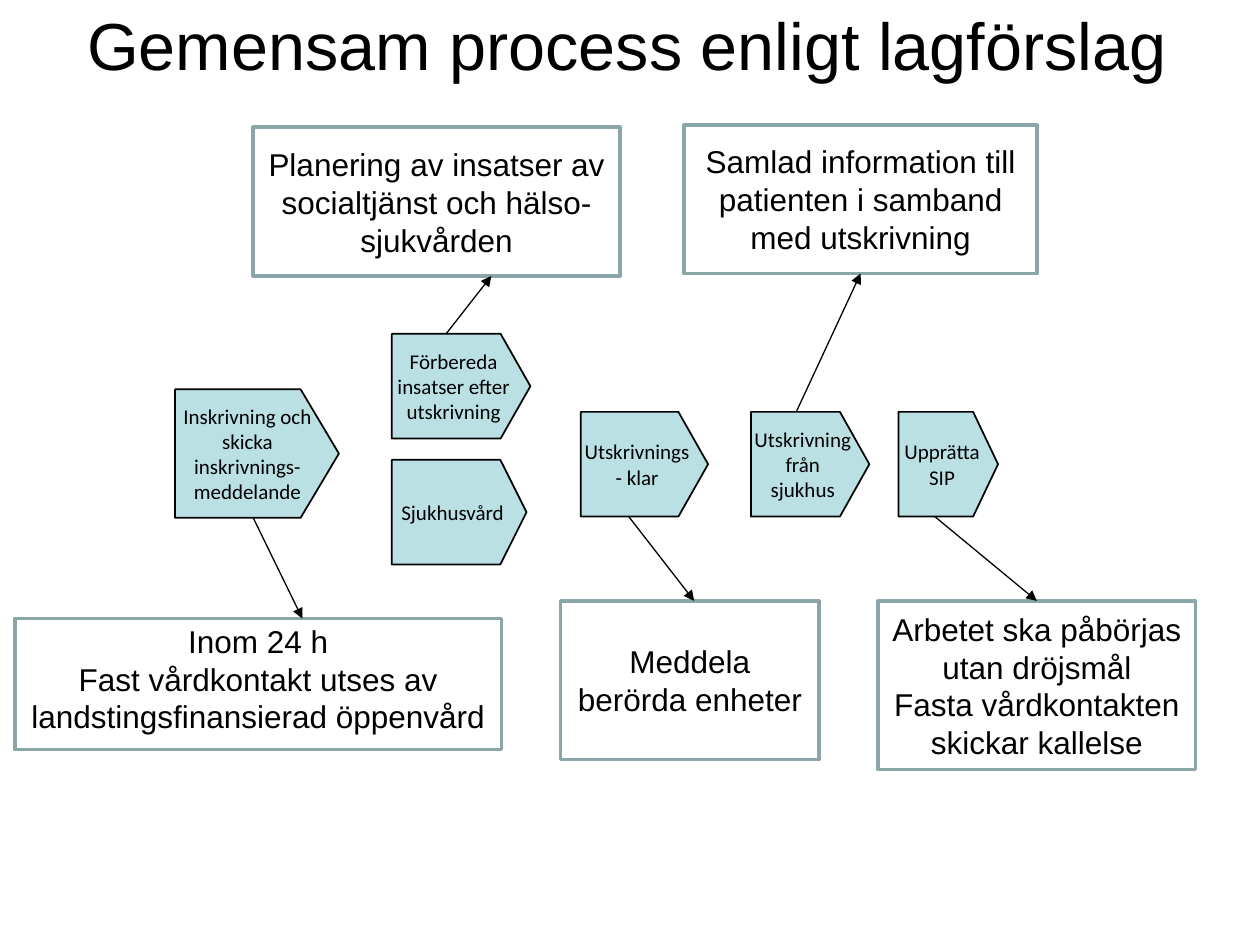
import pptx
import pptx.util
import pptx.dml.color
import pptx.enum.shapes
import pptx.enum.text
import pptx.oxml
import pptx.oxml.ns

Pt = pptx.util.Pt
SHAPE = pptx.enum.shapes.MSO_SHAPE
TOP, BOTTOM = 0, 2

THEME = {
    "ink": "000000", "step": "BBE0E3", "edge": "8AA6A8", "paper": "FFFFFF",
    "head": ("Arial", 38), "note": ("Arial", 18), "small": ("Calibri", 12),
}

TITLE = "Gemensam process enligt lagförslag"

# name: (left, top, width, height), point depth, text
STEPS = {
    "admit": ((100.1, 222.5, 93.6, 73.4), 0.298,
              "Inskrivning och skicka inskrivnings-meddelande"),
    "ready": ((331.9, 235.4, 72.7, 59.8), 0.283, "Utskrivnings- klar"),
    "plan": ((513.4, 235.4, 56.9, 59.8), 0.25, "Upprätta SIP"),
    "leave": ((429.1, 235.4, 67.7, 59.8), 0.281, "Utskrivning från sjukhus"),
    "prepare": ((223.9, 190.8, 79.2, 59.8), 0.284,
                "Förbereda insatser efter utskrivning"),
    "care": ((223.9, 262.8, 77, 59.8), 0.25, "Sjukhusvård"),
}

# step: (left, top, width, height), text, fill, arrow start x, arrow end x (None = middle)
NOTES = {
    "admit": ((8.6, 353.5, 277.9, 74.9),
              "Inom 24 h\nFast vårdkontakt utses av landstingsfinansierad öppenvård",
              None, 144.7, 172.8),
    "ready": ((320.4, 343.4, 147.6, 90.7), "Meddela berörda enheter",
              None, 359.3, 396.7),
    "plan": ((501.8, 343.4, 181.4, 96.5),
             "Arbetet ska påbörjas utan dröjsmål\nFasta vårdkontakten skickar kallelse",
             None, 534.2, None),
    "prepare": ((144.7, 72.7, 209.5, 85),
                "Planering av insatser av socialtjänst och hälso-sjukvården",
                "paper", 254.9, 280.8),
    "leave": ((391, 71.3, 201.6, 85),
              "Samlad information till patienten i samband med utskrivning",
              None, 455, None),
}


def color(name):
    return pptx.dml.color.RGBColor.from_string(THEME[name])


def write(shape, text, style):
    frame = shape.text_frame
    frame.word_wrap = True
    frame.vertical_anchor = pptx.enum.text.MSO_ANCHOR.MIDDLE
    frame.text = text
    for para in frame.paragraphs:
        para.alignment = pptx.enum.text.PP_ALIGN.CENTER
        for run in para.runs:
            run.font.name, size = THEME[style]
            run.font.size = Pt(size)
            run.font.color.rgb = color("ink")
    return frame


def draw(slide, kind, place, fill, edge, width):
    shape = slide.shapes.add_shape(kind, *map(Pt, place))
    shape.shadow.inherit = False
    if fill:
        shape.fill.solid()
        shape.fill.fore_color.rgb = color(fill)
    else:
        shape.fill.background()
    shape.line.color.rgb = color(edge)
    shape.line.width = Pt(width)
    return shape


def add_step(slide, place, depth, text):
    shape = draw(slide, SHAPE.PENTAGON, place, "step", "ink", 1)
    shape.adjustments[0] = depth
    frame = write(shape, text, "small")
    frame.margin_left = frame.margin_right = Pt(1.44)
    frame.margin_top = frame.margin_bottom = Pt(0.72)


def add_arrow(slide, step, place, box, start, end):
    """Link a step to its note, which lies either above or below it."""
    above = place[1] < step[1]
    y1 = step[1] if above else step[1] + step[3]
    y2 = place[1] + place[3] if above else place[1]
    x2 = place[0] + place[2] / 2 if end is None else end
    line = slide.shapes.add_connector(
        pptx.enum.shapes.MSO_CONNECTOR.STRAIGHT, *map(Pt, (start, y1, x2, y2)))
    if end is None:
        line.end_connect(box, BOTTOM if above else TOP)
    line.line.color.rgb = color("ink")
    line.line.width = Pt(0.75)
    tip = pptx.oxml.parse_xml(
        '<a:tailEnd %s type="triangle"/>' % pptx.oxml.ns.nsdecls("a"))
    line.line._get_or_add_ln().append(tip)
    line._element.spPr.append(pptx.oxml.parse_xml(
        "<a:effectLst %s/>" % pptx.oxml.ns.nsdecls("a")))


def main():
    deck = pptx.Presentation()
    deck.slide_width, deck.slide_height = Pt(720), Pt(540)
    slide = deck.slides.add_slide(deck.slide_layouts[6])

    title = slide.shapes.add_textbox(*map(Pt, (-8.6, 1.4, 734.4, 47.5)))
    write(title, TITLE, "head")

    for place, depth, text in STEPS.values():
        add_step(slide, place, depth, text)

    for name, (place, text, fill, start, end) in NOTES.items():
        box = draw(slide, SHAPE.RECTANGLE, place, fill, "edge", 2)
        frame = write(box, text, "note")
        if name == "admit":
            frame.margin_bottom = Pt(10)
        add_arrow(slide, STEPS[name][0], place, box, start, end)

    deck.save("out.pptx")


if __name__ == "__main__":
    main()
